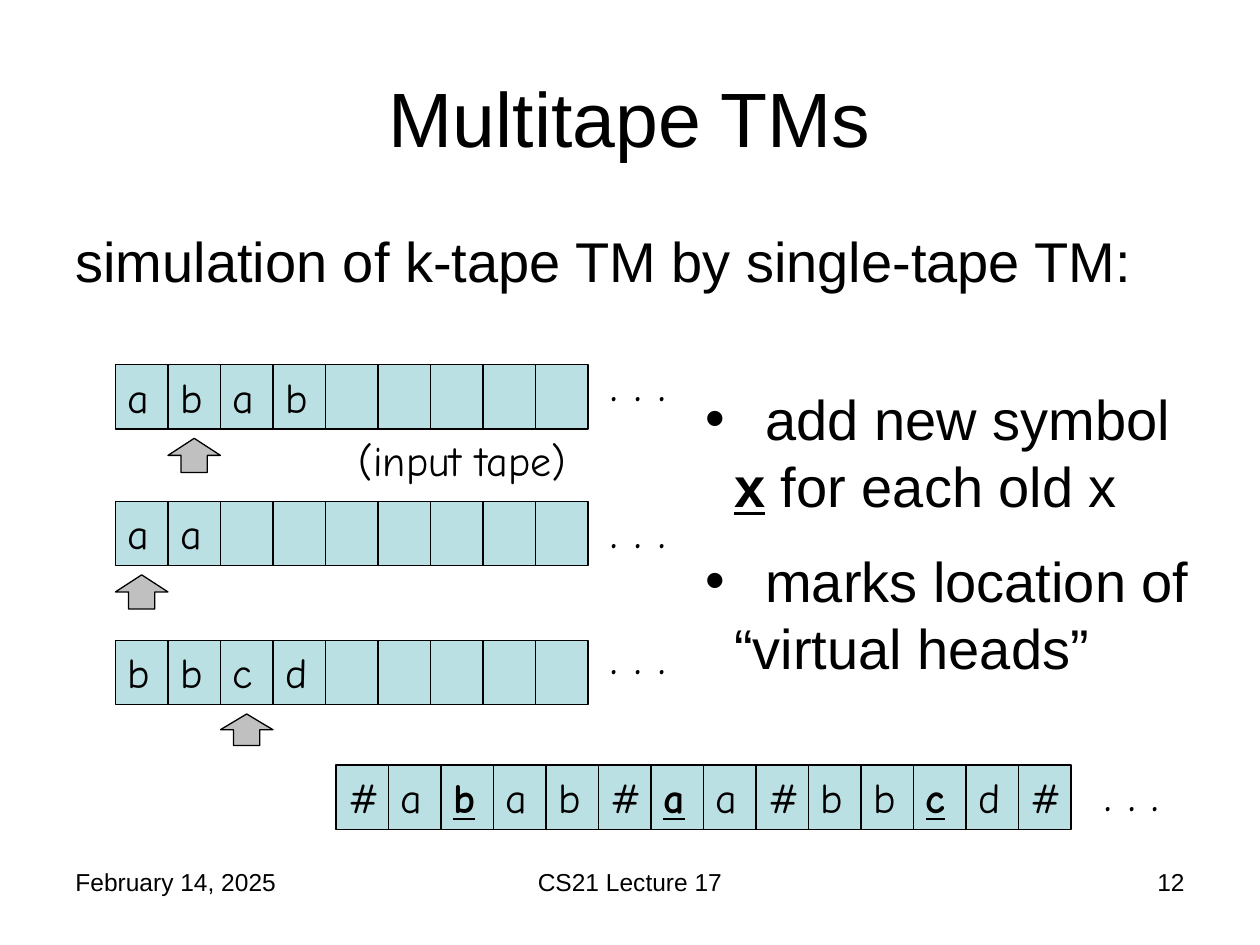
from dataclasses import dataclass

from lxml.etree import SubElement
from pptx import Presentation
from pptx.dml.color import RGBColor
from pptx.enum.shapes import MSO_SHAPE
from pptx.enum.text import MSO_ANCHOR, PP_ALIGN
from pptx.oxml.ns import qn
from pptx.util import Emu, Pt

PX = 9525  # EMU per px, 96 px to the inch


@dataclass(frozen=True)
class Theme:
    ink: RGBColor = RGBColor(0x00, 0x00, 0x00)
    cell: RGBColor = RGBColor(0xBB, 0xE0, 0xE3)
    head: RGBColor = RGBColor(0xC0, 0xC0, 0xC0)
    sans: str = "Arial"
    comic: str = "Comic Neue"
    title: int = 44
    body: int = 32
    dots: int = 28
    symbol: int = 24
    footer: int = 14
    outline: float = 0.75


THEME = Theme()
CELL_W, CELL_H = 40, 49
TAPE_LEFT, TAPE_CELLS = 88, 9

# Each tape: symbols, head position, top, head height, top of its dots
TAPES = [
    ("abab", 1, 278, 26, 264),
    ("aa", 0, 382, 26, 376),
    ("bbcd", 2, 488, 24, 472),
]


def px(*lengths):
    return [Emu(length * PX) for length in lengths]


def style_run(run, size, font, marked=False):
    run.font.size = Pt(size)
    run.font.name = font
    run.font.color.rgb = THEME.ink
    if marked:
        run.font.bold = True
        run.font.underline = True


def add_text(slide, box, text, size, font=THEME.sans,
             align=PP_ALIGN.LEFT, anchor=MSO_ANCHOR.TOP):
    frame = slide.shapes.add_textbox(*px(*box)).text_frame
    frame.word_wrap = True
    frame.vertical_anchor = anchor
    frame.text = text
    paragraph = frame.paragraphs[0]
    paragraph.alignment = align
    style_run(paragraph.runs[0], size, font)


def add_outlined(slide, preset, box, fill):
    shape = slide.shapes.add_shape(preset, *px(*box))
    shape.shadow.inherit = False
    shape.fill.solid()
    shape.fill.fore_color.rgb = fill
    shape.line.color.rgb = THEME.ink
    shape.line.width = Pt(THEME.outline)
    return shape


def add_tape(slide, left, top, symbols, cell_count, marked=()):
    for index in range(cell_count):
        box = (left + index * CELL_W, top, CELL_W, CELL_H)
        cell = add_outlined(slide, MSO_SHAPE.RECTANGLE, box, THEME.cell)
        if index < len(symbols):
            frame = cell.text_frame
            frame.vertical_anchor = MSO_ANCHOR.TOP
            frame.text = symbols[index]
            frame.paragraphs[0].alignment = PP_ALIGN.LEFT
            style_run(frame.paragraphs[0].runs[0], THEME.symbol,
                      THEME.comic, index in marked)


def add_dots(slide, left, top, width):
    add_text(slide, (left, top, width, 55), ". . .", THEME.dots, THEME.comic)


def add_k_tapes(slide, left):
    for symbols, head, top, head_height, dots_top in TAPES:
        add_tape(slide, left, top, symbols, TAPE_CELLS)
        head_box = (left + head * CELL_W, top + CELL_H + 7, CELL_W, head_height)
        add_outlined(slide, MSO_SHAPE.UP_ARROW, head_box, THEME.head)
        add_dots(slide, left + TAPE_CELLS * CELL_W + 8, dots_top, 152)
    add_text(slide, (left + 176, 326, 248, 48), "(input tape)",
             THEME.symbol, THEME.comic)


def add_single_tape(slide, left, top):
    # All tapes joined by #, with each head's symbol marked
    joined, marked = "#", set()
    for symbols, head, *_ in TAPES:
        marked.add(len(joined) + head)
        joined += symbols + "#"
    add_tape(slide, left, top, joined, len(joined), marked)
    add_dots(slide, left + len(joined) * CELL_W + 16, top - 7, 88)


def add_remarks(slide, box):
    remarks = [
        [("  add new symbol ", False), ("x", True), (" for each old x", False)],
        [("  marks location of “virtual heads”", False)],
    ]
    frame = slide.shapes.add_textbox(*px(*box)).text_frame
    frame.word_wrap = True
    for index, pieces in enumerate(remarks):
        paragraph = frame.add_paragraph() if index else frame.paragraphs[0]
        if index:
            paragraph.space_before = Pt(THEME.body / 2)
        # Hanging bullet
        properties = paragraph._p.get_or_add_pPr()
        properties.set("marL", str(22 * PX))
        properties.set("indent", str(-22 * PX))
        SubElement(properties, qn("a:buFont"), typeface=THEME.sans)
        SubElement(properties, qn("a:buChar"), char="•")
        for text, marked in pieces:
            run = paragraph.add_run()
            run.text = text
            style_run(run, THEME.body, THEME.sans, marked)


def add_footer(slide, top):
    for left, width, text, align in (
        (48, 224, "February 14, 2025", PP_ALIGN.LEFT),
        (328, 304, "CS21 Lecture 17", PP_ALIGN.CENTER),
        (688, 224, "12", PP_ALIGN.RIGHT),
    ):
        add_text(slide, (left, top, width, 50), text, THEME.footer, align=align)


def main():
    presentation = Presentation()
    presentation.slide_width, presentation.slide_height = px(960, 720)
    slide = presentation.slides.add_slide(presentation.slide_layouts[6])

    # Heading and lead line
    add_text(slide, (48, 29, 864, 120), "Multitape TMs", THEME.title,
             align=PP_ALIGN.CENTER, anchor=MSO_ANCHOR.MIDDLE)
    add_text(slide, (48, 168, 864, 72),
             "simulation of k-tape TM by single-tape TM:", THEME.body)

    # The k tapes, the tape that simulates them, and the remarks
    add_k_tapes(slide, TAPE_LEFT)
    add_single_tape(slide, 256, 583)
    add_remarks(slide, (528, 288, 392, 240))

    add_footer(slide, 656)
    presentation.save("out.pptx")


if __name__ == "__main__":
    main()
